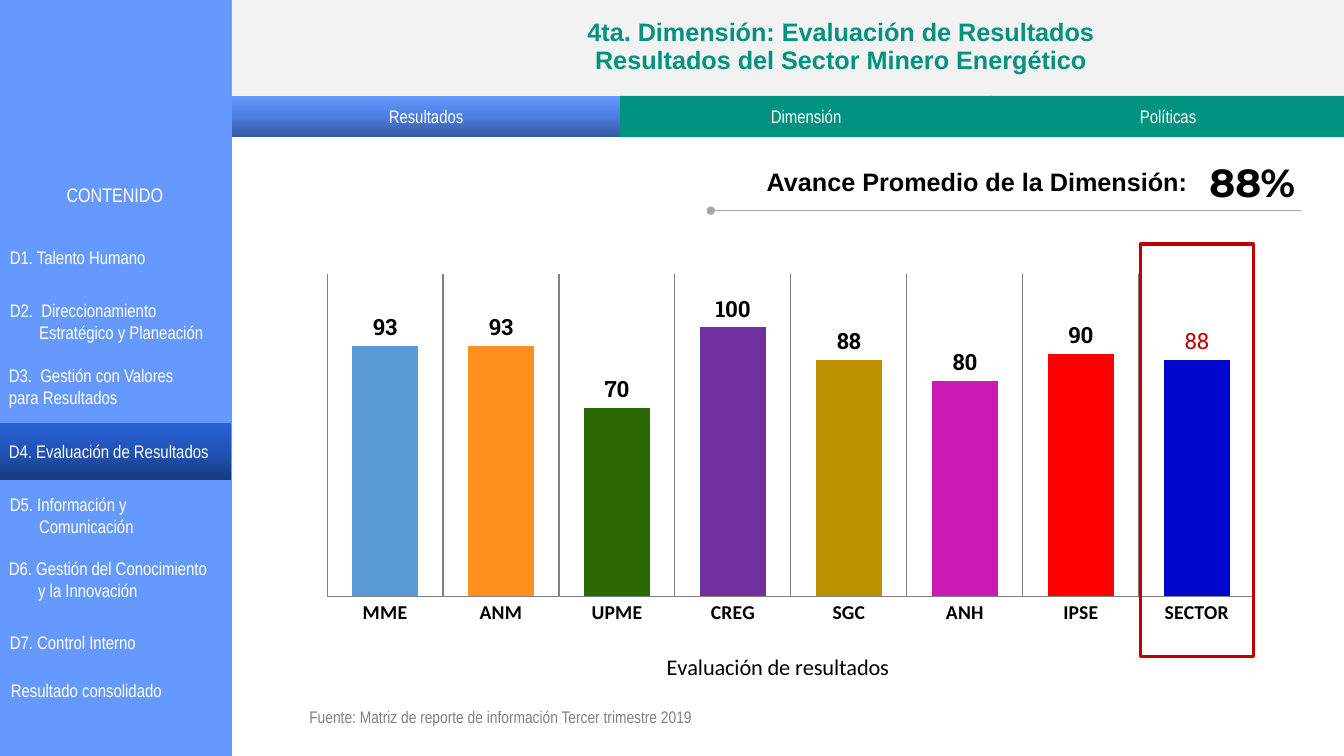
from copy import deepcopy
from dataclasses import dataclass

from pptx import Presentation
from pptx.chart.chart import Chart
from pptx.chart.data import CategoryChartData as ChartData
from pptx.dml.color import RGBColor
from pptx.enum.chart import XL_CHART_TYPE as Kind, XL_LABEL_POSITION as Spot
from pptx.enum.chart import XL_TICK_MARK as Tick
from pptx.enum.shapes import MSO_CONNECTOR as Link, MSO_SHAPE as Form
from pptx.enum.text import MSO_ANCHOR as Anchor, PP_ALIGN as Align
from pptx.oxml import parse_xml
from pptx.oxml.ns import nsdecls, qn
from pptx.shapes.autoshape import Shape
from pptx.util import Inches, Pt

WHITE = RGBColor(0xFF, 0xFF, 0xFF)
BLACK = RGBColor(0, 0, 0)
BLUE = RGBColor(0x66, 0x99, 0xFF)
GREEN = RGBColor(0, 0x92, 0x80)
PALE = RGBColor(0xF2, 0xF2, 0xF2)
GRAY = RGBColor(0x80, 0x80, 0x80)
SILVER = RGBColor(0xA6, 0xA6, 0xA6)
RED = RGBColor(0xC0, 0, 0)
TAB_FADE = (RGBColor(0x36, 0x58, 0x9E), RGBColor(0x4C, 0x7E, 0xE1), BLUE)
MENU_FADE = (RGBColor(0x17, 0x3A, 0x80), RGBColor(0x21, 0x53, 0xB6),
             RGBColor(0x28, 0x62, 0xD7))
NARROW = "Arial Narrow"

Box = tuple[float, float, float, float]
Fill = RGBColor | tuple[RGBColor, ...] | None


@dataclass
class Style:
    size: float = 13
    font: str = NARROW
    color: RGBColor = WHITE
    bold: bool = False
    align: Align = Align.CENTER
    space: float | None = None


@dataclass
class Tab:
    text: str
    left: float
    width: float
    fill: Fill = GREEN


@dataclass
class Item:
    lines: list[str]
    top: float
    left: float = 0
    margin: float = 0.29
    hang: tuple[float, ...] = (-0.29, -0.29)
    fill: Fill = None


@dataclass
class Bar:
    name: str
    value: int
    color: str


TABS = [
    Tab("Resultados", 2.3, 3.85, TAB_FADE),
    Tab("Dimensión", 6.15, 3.69),
    Tab("Políticas", 9.83, 3.51),
]
MENU = [
    Item(["D1. Talento Humano"], 2.27, margin=0, hang=(0,)),
    Item(["D2.  Direccionamiento Estratégico y Planeación"], 2.91),
    Item(["D3.  Gestión con Valores", "para Resultados"], 3.55, -0.01),
    Item(["D4. Evaluación de Resultados"], 4.2, -0.01, fill=MENU_FADE),
    Item(["D5. Información y Comunicación"], 4.83),
    Item(["D6. Gestión del Conocimiento", "y la Innovación"], 5.47, -0.01,
         hang=(-0.29, 0)),
    Item(["D7. Control Interno"], 6.09),
    Item(["Resultado consolidado"], 6.57, 0.01, margin=0, hang=(0,)),
]
BARS = [
    Bar("MME", 93, "5B9BD5"), Bar("ANM", 93, "FF8F1F"),
    Bar("UPME", 70, "2C6903"), Bar("CREG", 100, "7030A0"),
    Bar("SGC", 88, "BF9000"), Bar("ANH", 80, "C91BB4"),
    Bar("IPSE", 90, "FF0000"), Bar("SECTOR", 88, "0207CE"),
]

deck = Presentation()
deck.slide_width, deck.slide_height = Inches(13.33), Inches(7.5)
slide = deck.slides.add_slide(deck.slide_layouts[6])
shapes = slide.shapes


def paint(shape: Shape, fill: Fill) -> None:
    """Fill with nothing, one colour, or a fade from bottom to top."""
    if fill is None:
        shape.fill.background()
    elif isinstance(fill, RGBColor):
        shape.fill.solid()
        shape.fill.fore_color.rgb = fill
    else:
        shape.fill.gradient()
        shape.fill.gradient_angle = 90
        stops = shape.fill._xPr.find(".//" + qn("a:gsLst"))
        stops.append(deepcopy(stops[0]))
        for i, stop in enumerate(shape.fill.gradient_stops):
            stop.position = i / (len(fill) - 1)
            stop.color.rgb = fill[i]


def block(box: Box, fill: Fill = None, line: RGBColor | None = None,
          weight: float = 1, form: Form = Form.RECTANGLE) -> Shape:
    shape = shapes.add_shape(form, *map(Inches, box))
    shape.shadow.inherit = False
    paint(shape, fill)
    if line is None:
        shape.line.fill.background()
    else:
        shape.line.color.rgb = line
        shape.line.width = Pt(weight)
    return shape


def write(shape: Shape, lines: list[str], style: Style,
          anchor: Anchor = Anchor.MIDDLE) -> Shape:
    frame = shape.text_frame
    frame.word_wrap = True
    frame.vertical_anchor = anchor
    frame.text = "\n".join(lines)
    for para in frame.paragraphs:
        para.alignment = style.align
        para.line_spacing = style.space
        para.font.size, para.font.name = Pt(style.size), style.font
        para.font.bold, para.font.color.rgb = style.bold, style.color
    return shape


def label(box: Box, lines: list[str], style: Style,
          anchor: Anchor = Anchor.MIDDLE) -> Shape:
    return write(shapes.add_textbox(*map(Inches, box)), lines, style, anchor)


def layout(x: float, y: float, size: tuple[float, ...] = ()):
    """Build a manual chart layout in fractions of the chart."""
    inner = '<c:layoutTarget val="inner"/>' if size else ""
    tags = ["xMode", "yMode", "x", "y", "w", "h"]
    vals = ["edge", "edge", x, y, *size]
    body = "".join(f'<c:{t} val="{v}"/>' for t, v in zip(tags, vals))
    return parse_xml(f'<c:layout {nsdecls("c")}><c:manualLayout>{inner}{body}'
                     '</c:manualLayout></c:layout>')


def place(node, new) -> None:
    """Put a layout in its schema position, replacing an older one."""
    old = node.find(qn("c:layout"))
    if old is not None:
        node.remove(old)
    node.insert(1 if node.find(qn("c:tx")) is not None else 0, new)


def draw_chart(title: str, bars: list[Bar]) -> Chart:
    data = ChartData(number_format="0")
    data.categories = [bar.name for bar in bars]
    data.add_series(title, [bar.value for bar in bars])
    box = map(Inches, (2.95, 2.25, 9.79, 4.64))
    chart = shapes.add_chart(Kind.COLUMN_CLUSTERED, *box, data).chart
    chart.has_legend = False
    chart.font.name, chart.font.size = "Calibri", Pt(10)
    chart.font.color.rgb = BLACK

    # Title below the plot
    chart.has_title = True
    frame = chart.chart_title.text_frame
    frame.text = title
    font = frame.paragraphs[0].font
    font.size, font.name, font.bold = Pt(16), "Calibri", False
    font.color.rgb = BLACK
    place(chart.chart_title._element, layout(0.37, 0.9))
    place(chart._chartSpace.chart.plotArea,
          layout(0.03, 0.1, (0.94, 0.69)))

    # Axes
    names, scale = chart.category_axis, chart.value_axis
    names.major_tick_mark = names.minor_tick_mark = Tick.NONE
    names.tick_labels.font.size = Pt(14)
    names.tick_labels.font.bold = True
    names.has_major_gridlines = True
    for line in (names.format.line, names.major_gridlines.format.line):
        line.color.rgb = GRAY
        line.width = Pt(0.75)
    scale.minimum_scale, scale.maximum_scale = 0, 120
    scale.has_major_gridlines = scale.visible = False

    # Bars and values
    plot = chart.plots[0]
    plot.gap_width, plot.vary_by_categories = 75, False
    plot.has_data_labels = True
    tags = plot.data_labels
    tags.show_value, tags.position = True, Spot.OUTSIDE_END
    tags.number_format, tags.number_format_is_linked = "0", False
    series = plot.series[0]
    for i, bar in enumerate(bars):
        fill = series.points[i].format.fill
        fill.solid()
        fill.fore_color.rgb = RGBColor.from_string(bar.color)
    last = series.points[len(bars) - 1].data_label
    last.position = Spot.OUTSIDE_END
    for font, color, bold in ((tags.font, BLACK, True),
                              (last.font, RED, False)):
        font.size, font.name, font.bold = Pt(16), "Roboto Slab", bold
        font.color.rgb = color
    series.data_labels.show_value = True
    series.data_labels.position = Spot.OUTSIDE_END
    font = series.data_labels.font
    font.size, font.name, font.bold = Pt(16), "Roboto Slab", True
    font.color.rgb = BLACK
    return chart


draw_chart("Evaluación de resultados", BARS)

# Side panel and header
block((0, 0, 2.3, 7.5), BLUE)
write(block((-0.01, 1.71, 2.3, 0.44), form=Form.ROUNDED_RECTANGLE),
      ["CONTENIDO"], Style(14))
block((2.3, 0, 11.03, 0.95), PALE)
label((3.55, 0.25, 9.58, 0.54),
      ["4ta. Dimensión: Evaluación de Resultados",
       "Resultados del Sector Minero Energético"],
      Style(18, "Arial", GREEN, True, space=0.9), Anchor.BOTTOM)

# Average and its rule
label((7.37, 1.6, 4.64, 0.4), ["Avance Promedio de la Dimensión:"],
      Style(18, "Arial", BLACK, True), Anchor.TOP)
write(block((11.82, 1.52, 1.2, 0.57), line=WHITE), ["88%"],
      Style(28, "Montserrat", BLACK, True))
rule = shapes.add_connector(Link.STRAIGHT, *map(Inches, (7.05, 2.09, 12.9, 2.09)))
rule.line.color.rgb = SILVER
rule.line.width = Pt(0.5)
rule.line._get_or_add_ln().append(
    parse_xml(f'<a:headEnd {nsdecls("a")} type="oval"/>'))
rule._element.spPr.append(parse_xml(f'<a:effectLst {nsdecls("a")}/>'))

# Source note and frame around the sector
label((2.97, 6.97, 6.14, 0.28),
      ["Fuente: Matriz de reporte de información Tercer trimestre 2019"],
      Style(12, color=GRAY, align=Align.LEFT))
block((11.31, 2.42, 1.12, 4.09), line=RED, weight=2.25)

# Tabs
for tab in TABS:
    write(block((tab.left, 0.95, tab.width, 0.41), tab.fill), [tab.text], Style())

# Menu
for item in MENU:
    box = (item.left, item.top, 2.3, 0.56)
    style = Style(align=Align.LEFT)
    if item.fill:
        entry = write(block(box, item.fill), item.lines, style)
    else:
        entry = label(box, item.lines, style)
    for para, hang in zip(entry.text_frame.paragraphs, item.hang):
        props = para._p.get_or_add_pPr()
        props.set("marL", str(Inches(item.margin)))
        props.set("indent", str(Inches(hang)))

deck.save("out.pptx")
